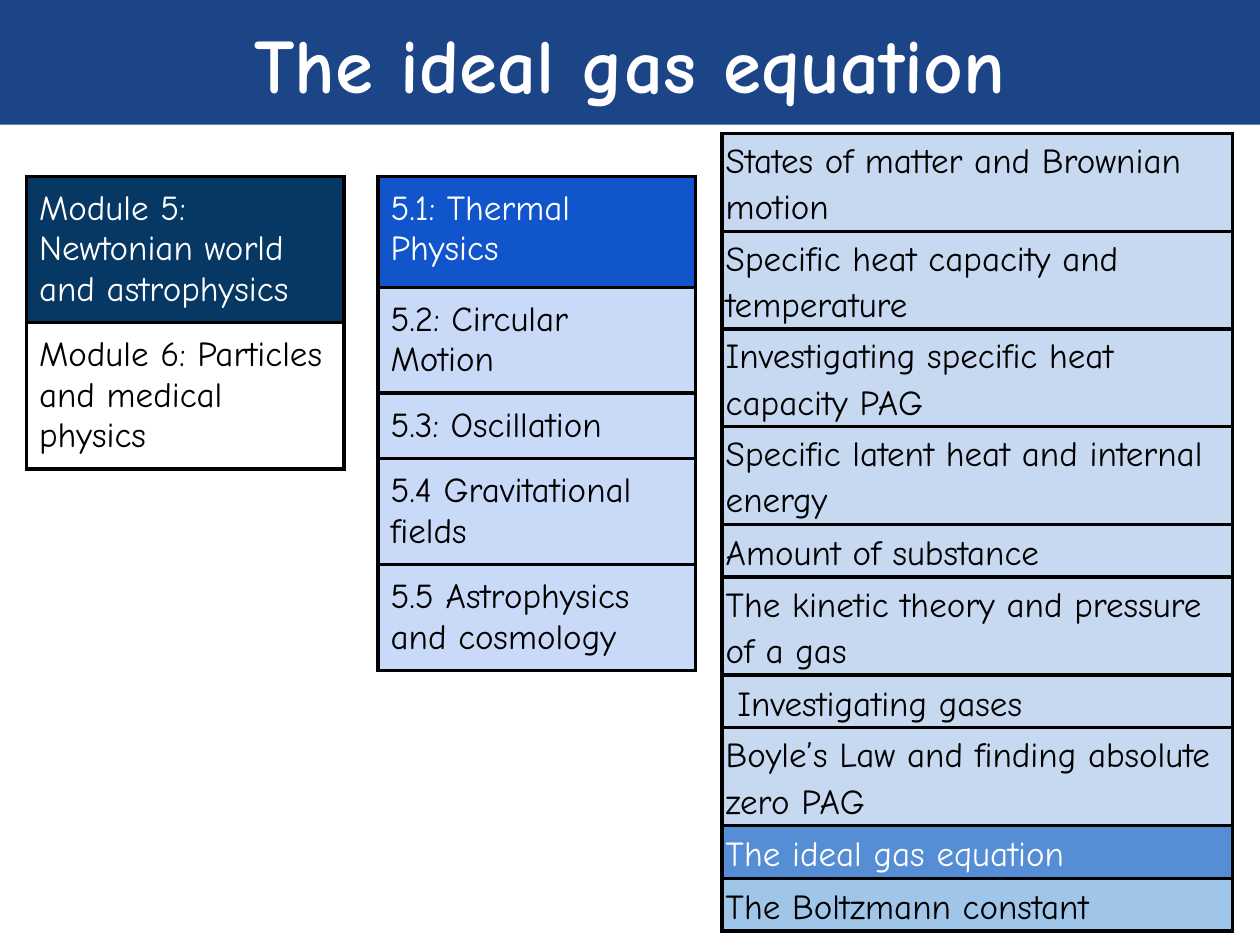
from dataclasses import dataclass

from lxml import etree
from pptx import Presentation
from pptx.dml.color import RGBColor
from pptx.enum.shapes import MSO_SHAPE
from pptx.enum.text import MSO_ANCHOR, PP_ALIGN
from pptx.oxml.ns import qn
from pptx.slide import Slide
from pptx.table import _Cell
from pptx.text.text import TextFrame
from pptx.util import Inches, Pt

RECTANGLE = MSO_SHAPE.RECTANGLE
TOP, MIDDLE, BOTTOM = MSO_ANCHOR.TOP, MSO_ANCHOR.MIDDLE, MSO_ANCHOR.BOTTOM
LEFT, CENTER = PP_ALIGN.LEFT, PP_ALIGN.CENTER

WHITE = RGBColor(0xFF, 0xFF, 0xFF)
BLACK = RGBColor(0x00, 0x00, 0x00)
BANNER_BLUE = RGBColor(0x1C, 0x45, 0x87)
MODULE_NAVY = RGBColor(0x07, 0x37, 0x63)
UNIT_BLUE = RGBColor(0x11, 0x55, 0xCC)
UNIT_PALE = RGBColor(0xC9, 0xDA, 0xF8)
TOPIC_PALE = RGBColor(0xC6, 0xD9, 0xF1)
TOPIC_BLUE = RGBColor(0x55, 0x8E, 0xD5)
TOPIC_SKY = RGBColor(0x9F, 0xC5, 0xE8)

FONT = "Comic Neue"
ROW_HEIGHT = 0.42
BORDER_WIDTH = Pt(2.25)


@dataclass(frozen=True)
class Entry:
    text: str
    fill: RGBColor
    color: RGBColor = BLACK


@dataclass(frozen=True)
class Listing:
    left: float
    top: float
    width: float
    entries: list[Entry]
    first_height: float = ROW_HEIGHT
    margin_x: float = 0.1
    margin_y: float = 0.1
    anchor: MSO_ANCHOR = TOP
    line_spacing: float = 1.0


LISTINGS = [
    Listing(0.21, 1.4, 2.52, [
        Entry("Module 5: Newtonian world and astrophysics", MODULE_NAVY, WHITE),
        Entry("Module 6: Particles and medical physics", WHITE),
    ]),
    Listing(3, 1.4, 2.52, [
        Entry("5.1: Thermal Physics", UNIT_BLUE, WHITE),
        Entry("5.2: Circular Motion", UNIT_PALE),
        Entry("5.3: Oscillation", UNIT_PALE),
        Entry("5.4 Gravitational fields", UNIT_PALE),
        Entry("5.5 Astrophysics and cosmology", UNIT_PALE),
    ], first_height=0.88),
    Listing(5.73, 1.06, 4.05, [
        Entry("States of matter and Brownian motion", TOPIC_PALE),
        Entry("Specific heat capacity and temperature", TOPIC_PALE),
        Entry("Investigating specific heat capacity PAG", TOPIC_PALE),
        Entry("Specific latent heat and internal energy", TOPIC_PALE),
        Entry("Amount of substance", TOPIC_PALE),
        Entry("The kinetic theory and pressure of a gas", TOPIC_PALE),
        Entry(" Investigating gases", TOPIC_PALE),
        Entry("Boyle’s Law and finding absolute zero PAG", TOPIC_PALE),
        Entry("The ideal gas equation", TOPIC_BLUE, WHITE),
        Entry("The Boltzmann constant", TOPIC_SKY),
    ], margin_x=0.03, margin_y=0.02, anchor=BOTTOM, line_spacing=1.15),
]


def write_text(frame: TextFrame, text: str, *, color: RGBColor, size: float = 20,
               bold: bool = False, align: PP_ALIGN = LEFT,
               line_spacing: float = 1.0) -> None:
    """Write one formatted paragraph into a text frame."""
    frame.word_wrap = True
    paragraph = frame.paragraphs[0]
    paragraph.alignment = align
    paragraph.line_spacing = line_spacing
    run = paragraph.add_run()
    run.text = text
    run.font.name = FONT
    run.font.size = Pt(size)
    run.font.bold = bold
    run.font.color.rgb = color


def draw_borders(cell: _Cell) -> None:
    """Give a cell a solid black border on all four sides."""
    properties = cell._tc.get_or_add_tcPr()
    for side in ("a:lnL", "a:lnR", "a:lnT", "a:lnB"):
        line = etree.SubElement(properties, qn(side), w=str(BORDER_WIDTH))
        fill = etree.SubElement(line, qn("a:solidFill"))
        etree.SubElement(fill, qn("a:srgbClr"), val=str(BLACK))


def draw_banner(slide: Slide, text: str) -> None:
    """Draw the title banner across the top of the slide."""
    banner = slide.shapes.add_shape(RECTANGLE, 0, 0, Inches(10), Inches(0.99))
    banner.shadow.inherit = False
    banner.fill.solid()
    banner.fill.fore_color.rgb = BANNER_BLUE
    banner.line.fill.background()
    frame = banner.text_frame
    frame.vertical_anchor = MIDDLE
    frame.margin_left = frame.margin_right = Inches(0.1)
    frame.margin_top = frame.margin_bottom = Inches(0.1)
    write_text(frame, text, color=WHITE, size=44, bold=True, align=CENTER)


def draw_listing(slide: Slide, listing: Listing) -> None:
    """Draw a one-column table of entries."""
    count = len(listing.entries)
    height = listing.first_height + (count - 1) * ROW_HEIGHT
    table = slide.shapes.add_table(
        count, 1, Inches(listing.left), Inches(listing.top),
        Inches(listing.width), Inches(height)).table
    table.first_row = table.horz_banding = False
    for index, entry in enumerate(listing.entries):
        table.rows[index].height = Inches(ROW_HEIGHT if index else listing.first_height)
        cell = table.cell(index, 0)
        draw_borders(cell)
        cell.fill.solid()
        cell.fill.fore_color.rgb = entry.fill
        cell.vertical_anchor = listing.anchor
        cell.margin_left = cell.margin_right = Inches(listing.margin_x)
        cell.margin_top = cell.margin_bottom = Inches(listing.margin_y)
        write_text(cell.text_frame, entry.text, color=entry.color,
                   line_spacing=listing.line_spacing)


def main() -> None:
    """Build the slide and save it."""
    presentation = Presentation()
    presentation.slide_width = Inches(10)
    presentation.slide_height = Inches(7.5)
    slide = presentation.slides.add_slide(presentation.slide_layouts[6])
    draw_banner(slide, "The ideal gas equation")
    for listing in LISTINGS:
        draw_listing(slide, listing)
    presentation.save("out.pptx")


if __name__ == "__main__":
    main()
